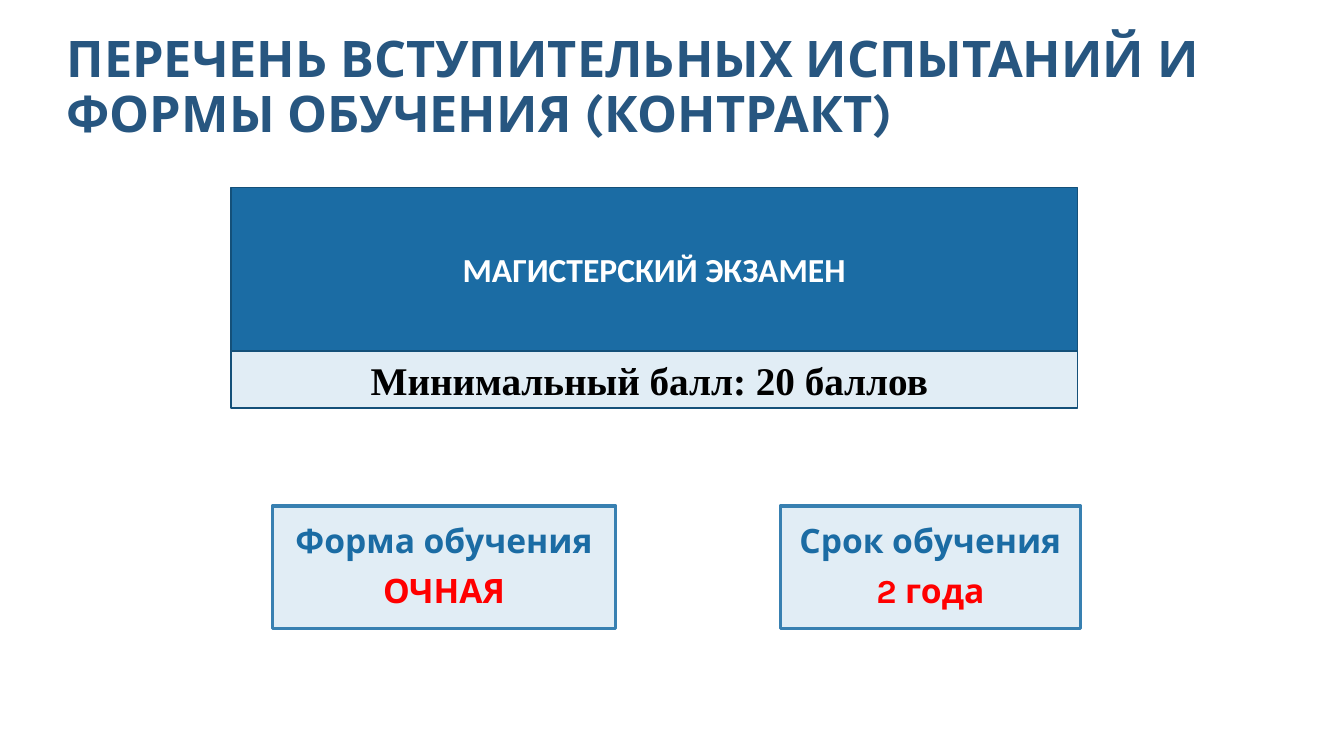
from lxml.etree import SubElement
from pptx import Presentation
from pptx.dml.color import RGBColor
from pptx.enum.shapes import MSO_SHAPE
from pptx.enum.text import MSO_ANCHOR, MSO_AUTO_SIZE, PP_ALIGN
from pptx.oxml.ns import qn
from pptx.util import Pt

BLUE, PALE, RED = "1B6CA4", "E1EDF5", "FF0000"
EXAM_LEFT, EXAM_WIDTH = 164.9, 604.8


def color(value):
    return RGBColor.from_string(value)


def place(shape, left, top, width, height):
    shape.left, shape.top = Pt(left), Pt(top)
    shape.width, shape.height = Pt(width), Pt(height)


def paint(shape, fill, line, line_width):
    shape.fill.solid()
    shape.fill.fore_color.rgb = color(fill)
    shape.line.color.rgb = color(line)
    shape.line.width = Pt(line_width)


def prepare_frame(shape):
    frame = shape.text_frame
    frame.word_wrap = True
    frame.auto_size = MSO_AUTO_SIZE.NONE
    frame.vertical_anchor = MSO_ANCHOR.MIDDLE
    return frame


def format_paragraph(paragraph, font_name, size, font_color, align=PP_ALIGN.CENTER):
    paragraph.alignment = align
    for run in paragraph.runs:
        font = run.font
        font.name, font.size, font.bold = font_name, Pt(size), True
        font.color.rgb = color(font_color)


def fill_title(title, text):
    place(title, 40.3, 20.2, 878.4, 86.4)
    frame = prepare_frame(title)
    frame.text = text
    paragraph = frame.paragraphs[0]
    paragraph.line_spacing = 0.9
    format_paragraph(paragraph, "Karla", 36, "275680", PP_ALIGN.LEFT)


def fill_card(body, left, width, heading, value):
    place(body, left, 361.4, width, 87.8)
    paint(body, PALE, "3880B1", 2.25)
    frame = prepare_frame(body)
    frame.text = f"{heading}\n{value}"
    for paragraph, font_color, gap in zip(frame.paragraphs, (BLUE, RED), (0, 10)):
        properties = paragraph._p.get_or_add_pPr()
        properties.set("marL", "0")
        properties.set("indent", "0")
        SubElement(properties, qn("a:buNone"))
        paragraph.line_spacing = 0.9
        paragraph.space_before = Pt(gap)
        format_paragraph(paragraph, "Karla", 24, font_color)


def add_exam_band(slide, top, height, fill, text, font_name, size, font_color):
    band = slide.shapes.add_shape(
        MSO_SHAPE.RECTANGLE, Pt(EXAM_LEFT), Pt(top), Pt(EXAM_WIDTH), Pt(height))
    band.shadow.inherit = False
    paint(band, fill, "145079", 1)
    frame = prepare_frame(band)
    frame.text = text
    format_paragraph(frame.paragraphs[0], font_name, size, font_color)


def main():
    presentation = Presentation()
    presentation.slide_width, presentation.slide_height = Pt(960), Pt(540)
    two_content = presentation.slide_layouts[3]
    slide = presentation.slides.add_slide(two_content)
    title, study_form, study_term = slide.placeholders

    fill_title(title, "ПЕРЕЧЕНЬ ВСТУПИТЕЛЬНЫХ ИСПЫТАНИЙ И ФОРМЫ ОБУЧЕНИЯ (КОНТРАКТ)")
    fill_card(study_form, 194.4, 245.5, "Форма обучения", "ОЧНАЯ")
    fill_card(study_term, 557.3, 214.6, "Срок обучения", "2 года")
    add_exam_band(slide, 133.9, 116.7, BLUE, "МАГИСТЕРСКИЙ ЭКЗАМЕН",
                  "Calibri", 24, "FFFFFF")
    add_exam_band(slide, 250.6, 41, PALE, "Минимальный балл: 20 баллов ",
                  "Times New Roman", 28, "000000")
    presentation.save("out.pptx")


if __name__ == "__main__":
    main()
